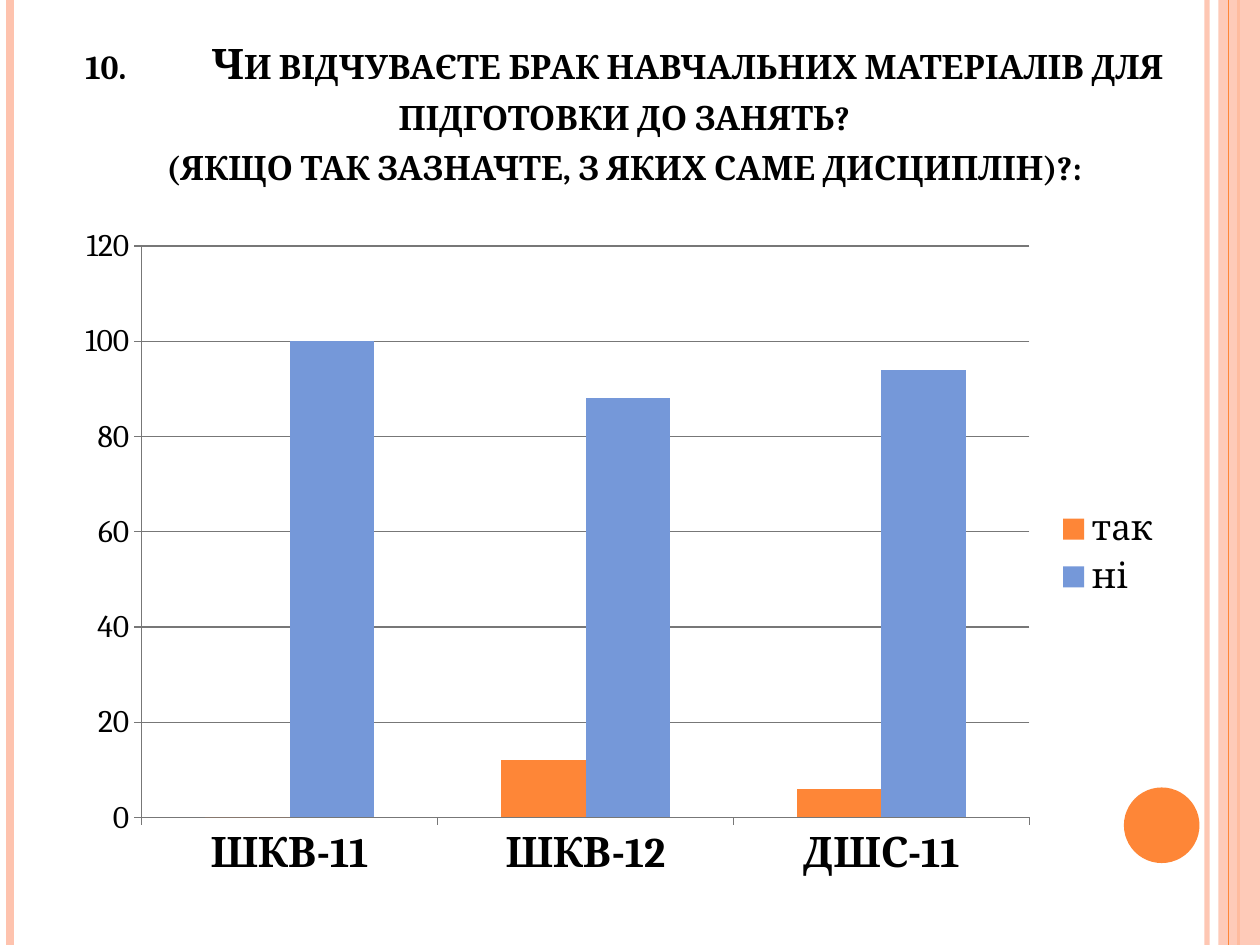
from dataclasses import dataclass

from lxml import etree
from pptx import Presentation
from pptx.chart.data import CategoryChartData
from pptx.dml.color import RGBColor
from pptx.enum.chart import XL_CHART_TYPE, XL_LEGEND_POSITION, XL_TICK_MARK
from pptx.enum.shapes import MSO_CONNECTOR, MSO_SHAPE
from pptx.enum.text import MSO_ANCHOR, PP_ALIGN
from pptx.oxml.ns import qn
from pptx.util import Inches, Pt

COLUMN_CLUSTERED = XL_CHART_TYPE.COLUMN_CLUSTERED
LEGEND_RIGHT = XL_LEGEND_POSITION.RIGHT
TICK_OUTSIDE = XL_TICK_MARK.OUTSIDE
STRAIGHT = MSO_CONNECTOR.STRAIGHT
RECTANGLE, OVAL = MSO_SHAPE.RECTANGLE, MSO_SHAPE.OVAL
BOTTOM, CENTER = MSO_ANCHOR.BOTTOM, PP_ALIGN.CENTER

WIDTH, HEIGHT = 10, 7.5


@dataclass(frozen=True)
class Theme:
    font: str = "Cambria"
    text: str = "000000"
    accent: str = "FE8637"
    pale: str = "FEC3AE"
    blue: str = "7598D9"
    grid: str = "777777"
    title_size: int = 24
    category_size: int = 24
    legend_size: int = 20
    chart_size: int = 18


class SlideBuilder:
    def __init__(self, slide, theme):
        self.slide = slide
        self.theme = theme

    def style_font(self, font, size, bold=False):
        values = {"name": self.theme.font, "size": Pt(size), "bold": bold}
        for name, value in values.items():
            setattr(font, name, value)
        font.color.rgb = RGBColor.from_string(self.theme.text)

    def set_alpha(self, fill_parent, percent):
        color = fill_parent.find(".//" + qn("a:srgbClr"))
        etree.SubElement(color, qn("a:alpha"), val=str(percent * 1000))

    def vertical_line(self, x, color, width, opacity=100):
        line = self.slide.shapes.add_connector(
            STRAIGHT, Inches(x), Inches(0), Inches(x), Inches(HEIGHT))
        line.line.color.rgb = RGBColor.from_string(color)
        line.line.width = Pt(width)
        properties = line._element.spPr
        if opacity < 100:
            self.set_alpha(properties, opacity)
        etree.SubElement(properties, qn("a:effectLst"))

    def shape(self, kind, box, color, opacity=100):
        shape = self.slide.shapes.add_shape(kind, *map(Inches, box))
        shape.shadow.inherit = False
        shape.fill.solid()
        shape.fill.fore_color.rgb = RGBColor.from_string(color)
        shape.line.fill.background()
        if opacity < 100:
            self.set_alpha(shape._element.spPr, opacity)

    def title(self, box, text, tab_stop):
        frame = self.slide.shapes.add_textbox(*map(Inches, box)).text_frame
        frame.word_wrap = True
        frame.vertical_anchor = BOTTOM
        paragraph = frame.paragraphs[0]
        paragraph.text = text
        paragraph.alignment = CENTER
        tabs = etree.SubElement(
            paragraph._element.get_or_add_pPr(), qn("a:tabLst"))
        etree.SubElement(
            tabs, qn("a:tab"), pos=str(Inches(tab_stop)), algn="l")
        for run in paragraph.runs:
            self.style_font(run.font, self.theme.title_size, bold=True)
            run.font._element.set("cap", "small")

    def column_chart(self, box, categories, series):
        """Draw clustered columns; series holds (name, values, color) rows."""
        theme = self.theme
        data = CategoryChartData()
        data.categories = categories
        for name, values, _ in series:
            data.add_series(name, values)
        chart = self.slide.shapes.add_chart(
            COLUMN_CLUSTERED, *map(Inches, box), data).chart
        chart.has_title = False
        self.style_font(chart.font, theme.chart_size)

        plot = chart.plots[0]
        plot.vary_by_categories = False
        plot.gap_width = 150
        plot.overlap = 0
        for column, (_, _, color) in zip(plot.series, series):
            column.format.fill.solid()
            column.format.fill.fore_color.rgb = RGBColor.from_string(color)

        chart.has_legend = True
        chart.legend.position = LEGEND_RIGHT
        chart.legend.include_in_layout = False
        self.style_font(chart.legend.font, theme.legend_size)

        category_axis, value_axis = chart.category_axis, chart.value_axis
        self.style_font(category_axis.tick_labels.font, theme.category_size, bold=True)
        value_axis.has_major_gridlines = True
        value_axis.minimum_scale, value_axis.maximum_scale = 0, 120
        value_axis.major_unit = 20
        for axis in (category_axis, value_axis):
            axis.major_tick_mark = TICK_OUTSIDE
        for part in (category_axis, value_axis, value_axis.major_gridlines):
            part.format.line.color.rgb = RGBColor.from_string(theme.grid)
            part.format.line.width = Pt(0.75)


def main():
    presentation = Presentation()
    presentation.slide_width = Inches(WIDTH)
    presentation.slide_height = Inches(HEIGHT)
    theme = Theme()
    builder = SlideBuilder(
        presentation.slides.add_slide(presentation.slide_layouts[6]), theme)

    builder.vertical_line(9.58, theme.pale, 3, opacity=93)
    builder.vertical_line(0.08, theme.pale, 4.5)
    builder.vertical_line(9.83, theme.accent, 1.5)
    builder.shape(RECTANGLE, (9.67, 0, 0.33, HEIGHT), theme.pale, opacity=87)
    builder.vertical_line(9.75, theme.accent, 0.75)
    builder.shape(OVAL, (8.92, 6.25, 0.6, 0.6), theme.accent)

    builder.title(
        (0.35, 0.3, 9.21, 1.25),
        "10.\tЧи відчуваєте брак навчальних матеріалів для підготовки до занять?"
        "\v(якщо так зазначте, з яких саме дисциплін)?:",
        tab_stop=1)
    builder.column_chart(
        (0.5, 1.7, 8.83, 5.38),
        ("ШКВ-11", "ШКВ-12", "ДШС-11"),
        (("так", (0, 12, 6), theme.accent),
         ("ні", (100, 88, 94), theme.blue)))
    presentation.save("out.pptx")


if __name__ == "__main__":
    main()
